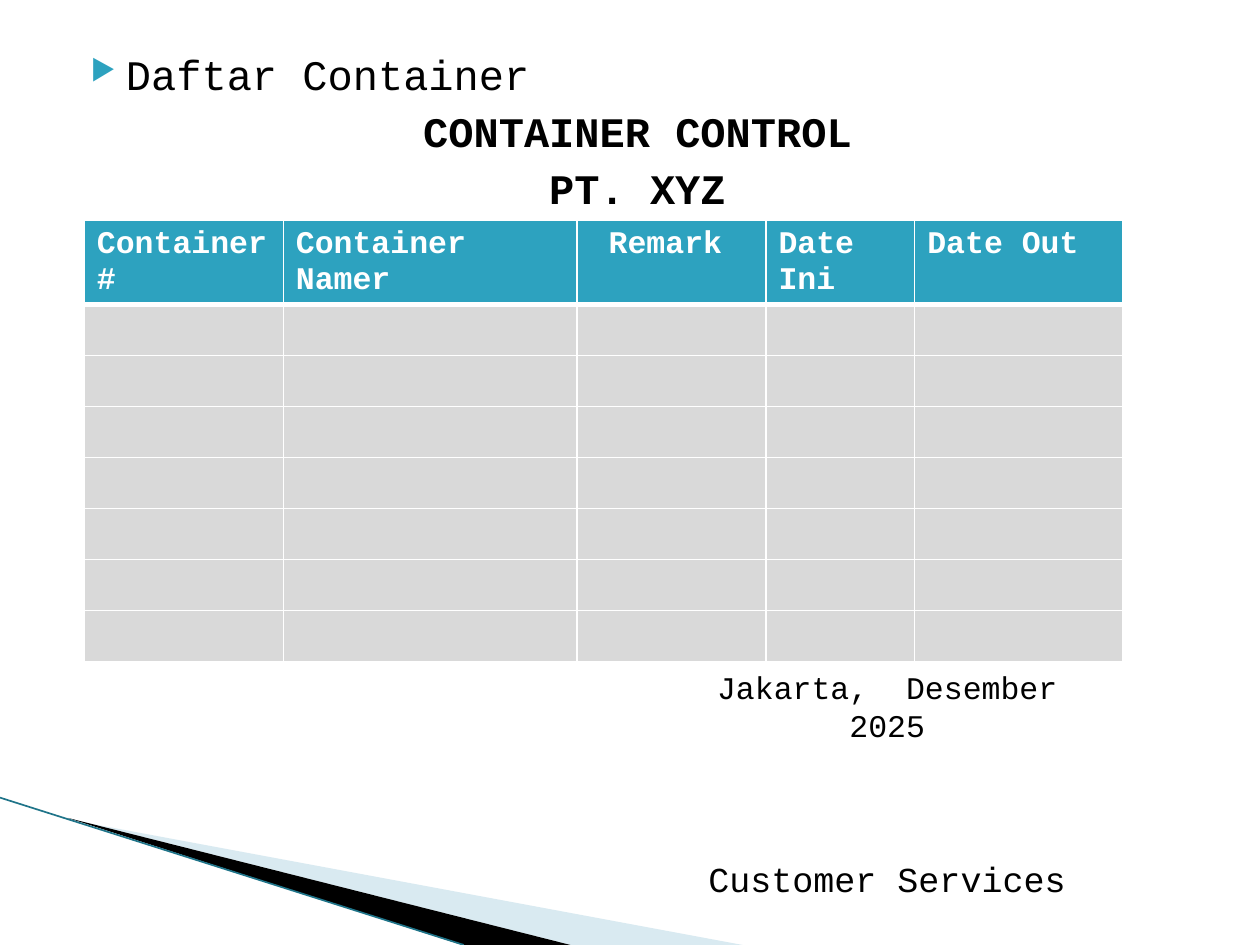
from lxml.etree import SubElement
from pptx import Presentation
from pptx.dml.color import RGBColor
from pptx.enum.shapes import MSO_CONNECTOR as Connector
from pptx.enum.text import PP_ALIGN as Align
from pptx.oxml.ns import qn
from pptx.util import Cm, Pt

FONT = "Courier New"
TEAL, GREY, WHITE, BLACK = "2DA2BF", "D9D9D9", "FFFFFF", "000000"
HEADERS = ["Container#", "Container Namer", "Remark", "Date Ini", "Date Out"]
COLUMN_WIDTHS = [4.01, 5.92, 3.81, 3, 4.19]
BODY_ROWS = 7
ROW_HEIGHT = 1.03


def paint(color_format, value):
    """Give a colour format a hex colour."""
    color_format.rgb = RGBColor.from_string(value)


def style(font, size, color=BLACK, bold=False):
    """Set the face, size, colour and weight of a font."""
    font.name, font.size, font.bold = FONT, Pt(size), bold
    paint(font.color, color)


def add_wedge(slide, left, top, points, color, opacity=100):
    """Draw a filled wedge from points relative to its corner."""
    (x, y), *others = [(Cm(left + px), Cm(top + py)) for px, py in points]
    builder = slide.shapes.build_freeform(x, y)
    builder.add_line_segments(others)
    wedge = builder.convert_to_shape()
    wedge.shadow.inherit = False
    wedge.line.fill.background()
    wedge.fill.solid()
    paint(wedge.fill.fore_color, color)
    if opacity < 100:
        hue = wedge.fill._xPr.find(qn("a:solidFill"))[0]
        SubElement(hue, qn("a:alpha"), val=str(opacity * 1000))


def add_corner(slide, left, top, width, height):
    """Draw the swoosh in the lower left corner."""
    tip_x, tip_y = left + 1.37, top + 0.41
    drop = height - 0.41
    add_wedge(slide, tip_x, tip_y,
              [(0, 0.03), (13.6, drop), (10.13, drop), (0, 0)], "A0CBDC", 40)
    add_wedge(slide, tip_x, tip_y,
              [(0, 0), (10.13, drop), (7.95, drop)], BLACK)
    edge = slide.shapes.add_connector(
        Connector.STRAIGHT, Cm(left), Cm(top), Cm(left + width), Cm(top + height))
    paint(edge.line.color, "1F7489")
    edge.line.width = Pt(0.95)
    SubElement(edge._element.spPr, qn("a:effectLst"))


def add_text_box(slide, left, top, width, height, lines):
    """Add a wrapping text box and return its paragraphs."""
    frame = slide.shapes.add_textbox(
        Cm(left), Cm(top), Cm(width), Cm(height)).text_frame
    frame.word_wrap = True
    frame.margin_top = Cm(0.13)
    frame.text = "\n".join(lines)
    return frame.paragraphs


def add_heading(slide, left, top, width, height):
    """Add the bulleted topic and the two centred title lines."""
    topic, *titles = add_text_box(
        slide, left, top, width, height,
        ["Daftar Container", "CONTAINER CONTROL", "PT. XYZ"])
    props = topic._p.get_or_add_pPr()
    props.set("marL", str(Cm(1.02)))
    props.set("indent", str(Cm(-0.71)))
    bullet_color = SubElement(props, qn("a:buClr"))
    SubElement(bullet_color, qn("a:srgbClr"), val=TEAL)
    SubElement(props, qn("a:buSzPct"), val="68000")
    SubElement(props, qn("a:buChar"), char="▶")
    for title in titles:
        title.alignment = Align.CENTER
        title.space_before = Pt(4)
        title._p.get_or_add_pPr().set("marL", str(Cm(0.3)))
    for line in (topic, *titles):
        style(line.runs[0].font, 24, bold=line is not topic)


def set_borders(cell, bottom):
    """Draw white rules round a cell, the lower one of the given width."""
    props = cell._tc.get_or_add_tcPr()
    rules = [("a:lnL", 1), ("a:lnR", 1), ("a:lnT", 1), ("a:lnB", bottom)]
    for position, (tag, width) in enumerate(rules):
        rule = SubElement(props, qn(tag), w=str(Pt(width)))
        SubElement(SubElement(rule, qn("a:solidFill")), qn("a:srgbClr"), val=WHITE)
        props.insert(position, rule)


def add_container_table(slide, left, top, width, height):
    """Add the container list with a header and empty rows."""
    table = slide.shapes.add_table(
        BODY_ROWS + 1, len(HEADERS), Cm(left), Cm(top), Cm(width), Cm(height)).table
    for column, column_width in zip(table.columns, COLUMN_WIDTHS):
        column.width = Cm(column_width)
    for index, row in enumerate(table.rows):
        row.height = Cm(ROW_HEIGHT)
        for cell in row.cells:
            cell.fill.solid()
            paint(cell.fill.fore_color, GREY if index else TEAL)
            set_borders(cell, 1 if index else 3)
    for cell, header in zip(table.rows[0].cells, HEADERS):
        cell.text = header
        cell.margin_bottom = Cm(0.03)
        style(cell.text_frame.paragraphs[0].runs[0].font, 18, WHITE, True)
    table.cell(0, HEADERS.index("Remark")).margin_left = Cm(0.64)


def add_signature(slide, left, top, width, height):
    """Add the place and date above the signing department."""
    date, signer = add_text_box(
        slide, left, top, width, height,
        ["Jakarta,  Desember 2025", "Customer Services"])
    for line, size in ((date, 18), (signer, 20)):
        line.alignment = Align.CENTER
        style(line.runs[0].font, size)
    signer.space_before = Pt(65)


def main():
    """Build and save the slide."""
    deck = Presentation()
    deck.slide_width, deck.slide_height = Cm(25.4), Cm(19.05)
    slide = deck.slides.add_slide(deck.slide_layouts[6])
    add_corner(slide, 0, 16.08, 9.35, 2.97)
    add_heading(slide, 1.27, 0.84, 22.86, 15.85)
    add_container_table(slide, 1.7, 4.45, sum(COLUMN_WIDTHS),
                        ROW_HEIGHT * (BODY_ROWS + 1))
    add_signature(slide, 13.34, 13.34, 9.09, 4.19)
    deck.save("out.pptx")


if __name__ == "__main__":
    main()
